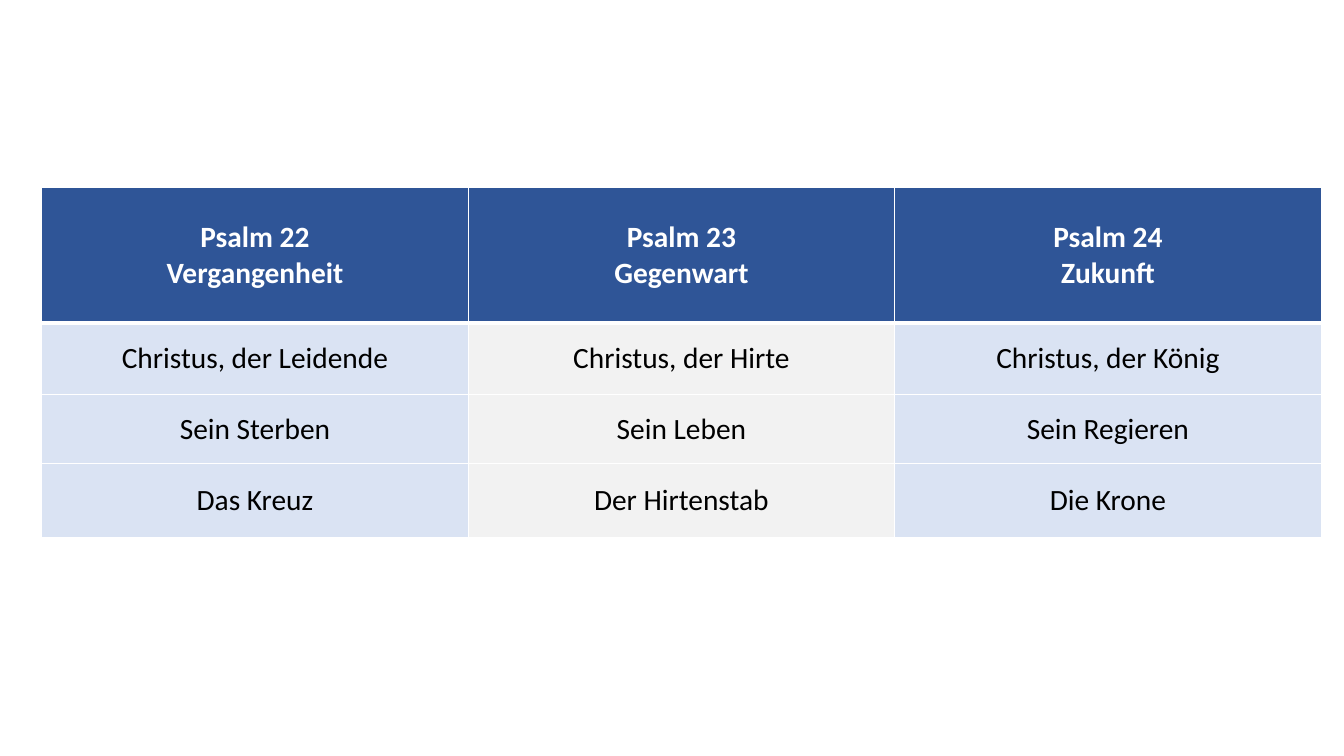
import pptx
import pptx.dml.color
import pptx.enum.text
import pptx.oxml
import pptx.oxml.ns
import pptx.util
from pptx.util import Pt

COLORS = {
    "header": "2F5597",
    "outer": "DAE3F3",
    "middle": "F2F2F2",
    "rule": "FFFFFF",
    "header_text": "FFFFFF",
    "body_text": "000000",
}

PSALMS = [
    ["Psalm 22\nVergangenheit", "Psalm 23\nGegenwart", "Psalm 24\nZukunft"],
    ["Christus, der Leidende", "Christus, der Hirte", "Christus, der König"],
    ["Sein Sterben", "Sein Leben", "Sein Regieren"],
    ["Das Kreuz", "Der Hirtenstab", "Die Krone"],
]
ROW_HEIGHTS = [96.5, 51.1, 49.7, 52.6]


def rgb(name):
    return pptx.dml.color.RGBColor.from_string(COLORS[name])


def rule_cell(cell, widths):
    """Draw the cell borders; widths maps each side (L, R, T, B) to points."""
    properties = cell._tc.get_or_add_tcPr()
    for side, width in widths.items():
        properties.append(pptx.oxml.parse_xml(
            f'<a:ln{side} {pptx.oxml.ns.nsdecls("a")} w="{Pt(width)}">'
            f'<a:solidFill><a:srgbClr val="{COLORS["rule"]}"/></a:solidFill>'
            f'</a:ln{side}>'))


def fill_cell(cell, text, background, text_color, bold):
    cell.fill.solid()
    cell.fill.fore_color.rgb = rgb(background)
    cell.vertical_anchor = pptx.enum.text.MSO_ANCHOR.MIDDLE
    cell.margin_left = cell.margin_right = Pt(10)
    cell.margin_top = cell.margin_bottom = Pt(0)
    cell.text = text
    for paragraph in cell.text_frame.paragraphs:
        paragraph.alignment = pptx.enum.text.PP_ALIGN.CENTER
        paragraph.font.name = "Calibri"
        paragraph.font.size = Pt(21)
        paragraph.font.bold = bold
        paragraph.font.color.rgb = rgb(text_color)


def add_psalm_table(slide, left, top, width):
    column_count = len(PSALMS[0])
    psalm_table = slide.shapes.add_table(
        len(PSALMS), column_count,
        Pt(left), Pt(top), Pt(width), Pt(sum(ROW_HEIGHTS))).table
    for column in psalm_table.columns:
        column.width = Pt(width / column_count)

    for r, (texts, height) in enumerate(zip(PSALMS, ROW_HEIGHTS)):
        psalm_table.rows[r].height = Pt(height)
        for c, text in enumerate(texts):
            cell = psalm_table.cell(r, c)
            is_header = r == 0
            # Thick rule between header and body
            rule_cell(cell, {"L": 1, "R": 1, "T": 3 if r == 1 else 1,
                             "B": 3 if is_header else 1})
            if is_header:
                fill_cell(cell, text, "header", "header_text", True)
            else:
                background = "middle" if c == 1 else "outer"
                fill_cell(cell, text, background, "body_text", False)


def main():
    presentation = pptx.Presentation()
    presentation.slide_width = Pt(960)
    presentation.slide_height = Pt(540)
    slide = presentation.slides.add_slide(presentation.slide_layouts[6])

    # Comparison of the three psalms
    add_psalm_table(slide, left=29.8, top=134, width=914)
    presentation.save("out.pptx")


if __name__ == "__main__":
    main()
